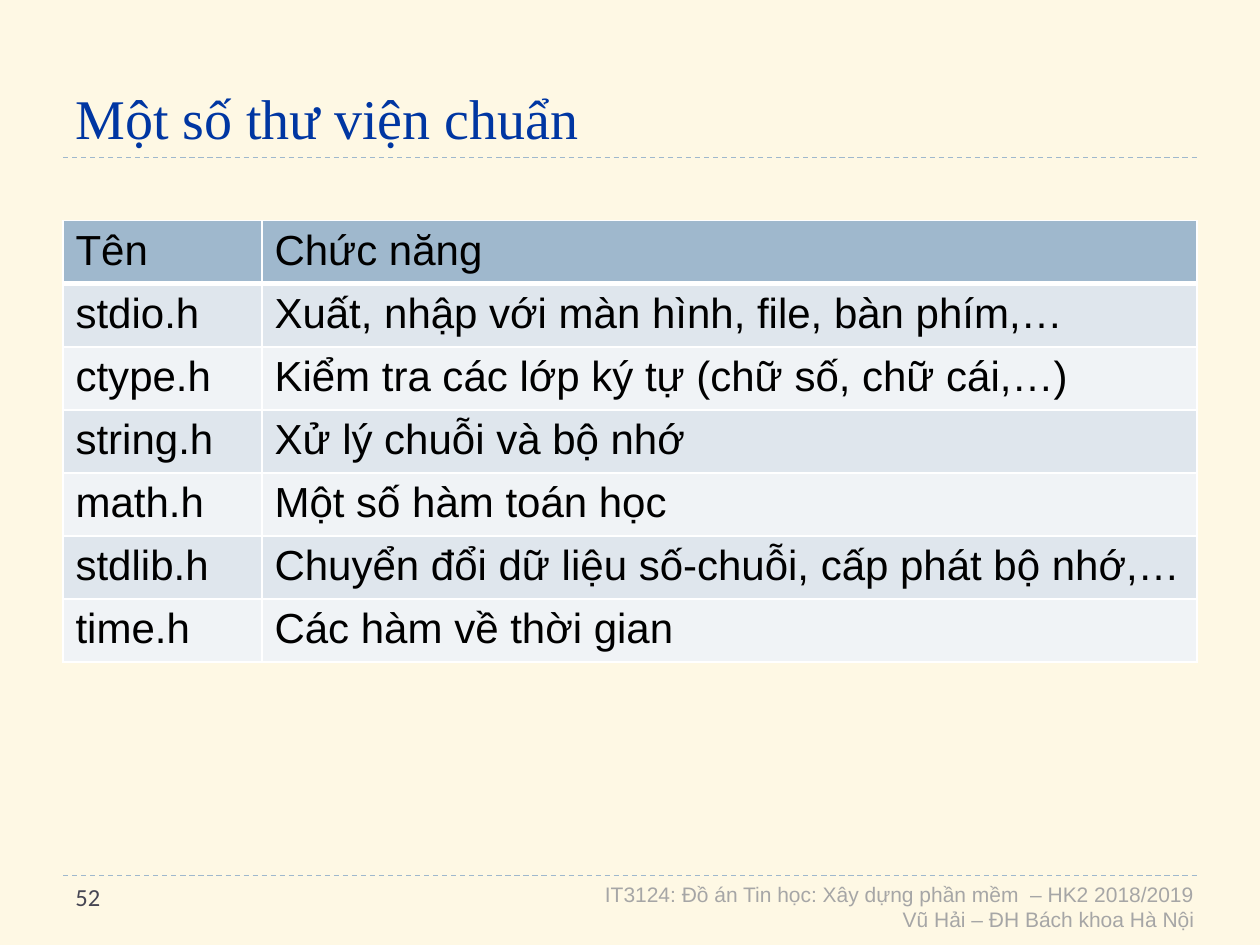
from lxml import etree
from pptx import Presentation
from pptx.dml.color import RGBColor
from pptx.enum.dml import MSO_LINE
from pptx.enum.shapes import MSO_CONNECTOR
from pptx.enum.text import MSO_ANCHOR, PP_ALIGN
from pptx.oxml import parse_xml
from pptx.oxml.ns import nsdecls, qn
from pptx.util import Cm, Pt

STRAIGHT = MSO_CONNECTOR.STRAIGHT
DASH = MSO_LINE.DASH
TOP, BOTTOM = MSO_ANCHOR.TOP, MSO_ANCHOR.BOTTOM
LEFT, RIGHT = PP_ALIGN.LEFT, PP_ALIGN.RIGHT

CREAM = RGBColor(0xFE, 0xF8, 0xE4)
BLUE = RGBColor(0x00, 0x36, 0xA2)
STEEL = RGBColor(0x9F, 0xB8, 0xCD)
BAND_DARK = RGBColor(0xDF, 0xE6, 0xED)
BAND_LIGHT = RGBColor(0xF0, 0xF3, 0xF6)
GREY = RGBColor(0xA6, 0xA6, 0xA6)
SLATE = RGBColor(0x46, 0x46, 0x53)
BLACK = RGBColor(0, 0, 0)

TITLE_FONT = {"name": "Times New Roman", "size": Pt(32)}
FOOTER_FONT = {"name": "Arial", "size": Pt(12)}
NUMBER_FONT = {"name": "Calibri", "size": Pt(14)}
CELL_FONT = {"name": "Arial", "size": Pt(24), "bold": False}

LIBRARIES = [
    ("Tên", "Chức năng"),
    ("stdio.h", "Xuất, nhập với màn hình, file, bàn phím,…"),
    ("ctype.h", "Kiểm tra các lớp ký tự (chữ số, chữ cái,…)"),
    ("string.h", "Xử lý chuỗi và bộ nhớ"),
    ("math.h", "Một số hàm toán học"),
    ("stdlib.h", "Chuyển đổi dữ liệu số-chuỗi, cấp phát bộ nhớ,…"),
    ("time.h", "Các hàm về thời gian"),
]
FOOTER = [
    "IT3124: Đồ án Tin học: Xây dựng phần mềm  – HK2 2018/2019",
    "Vũ Hải – ĐH Bách khoa Hà Nội",
]


def format_run(r, font, color):
    for key, value in font.items():
        setattr(r.font, key, value)
    r.font.color.rgb = color


def add_text(slide, box, lines, font, color, align=LEFT, anchor=TOP):
    tf = slide.shapes.add_textbox(*map(Cm, box)).text_frame
    tf.word_wrap = True
    tf.vertical_anchor = anchor
    for i, line in enumerate(lines):
        p = tf.paragraphs[0] if i == 0 else tf.add_paragraph()
        p.alignment = align
        r = p.add_run()
        r.text = line
        format_run(r, font, color)


def add_rule(slide, x, y, w):
    line = slide.shapes.add_connector(STRAIGHT, Cm(x), Cm(y), Cm(x + w), Cm(y))
    line.line.color.rgb = STEEL
    line.line.width = Pt(0.75)
    line.line.dash_style = DASH
    etree.SubElement(line._element.spPr, qn("a:effectLst"))


def set_borders(cell, widths):
    """Give the cell white borders; widths maps a side to points."""
    tc_pr = cell._tc.get_or_add_tcPr()
    for i, (side, width) in enumerate(widths.items()):
        tc_pr.insert(i, parse_xml(
            f'<a:ln{side} {nsdecls("a")} w="{Pt(width)}"><a:solidFill>'
            f'<a:srgbClr val="FFFFFF"/></a:solidFill></a:ln{side}>'))


def add_header(slide, x, y, w, h):
    add_text(slide, (x, y, w, h), ["Một số thư viện chuẩn"],
             TITLE_FONT, BLUE, anchor=BOTTOM)
    add_rule(slide, x, y + h, w)


def add_library_table(slide, x, y, w, h):
    name_w = 4.01
    table = slide.shapes.add_table(
        len(LIBRARIES), 2, Cm(x), Cm(y), Cm(w), Cm(h)).table
    for column, width in zip(table.columns, (name_w, w - name_w)):
        column.width = Cm(width)
    for i, row in enumerate(LIBRARIES):
        fill = STEEL if i == 0 else (BAND_LIGHT, BAND_DARK)[i % 2]
        # A thicker line parts the heading row from the rest
        widths = {"L": 1, "R": 1, "T": 3 if i == 1 else 1,
                  "B": 3 if i == 0 else 1}
        for j, text in enumerate(row):
            cell = table.cell(i, j)
            cell.fill.solid()
            cell.fill.fore_color.rgb = fill
            set_borders(cell, widths)
            r = cell.text_frame.paragraphs[0].add_run()
            r.text = text
            format_run(r, CELL_FONT, BLACK)


def add_footer(slide, x, y, w, h):
    credit_x = x + 9.09
    add_rule(slide, x, y, w)
    add_text(slide, (credit_x, y, 13.97, h), FOOTER, FOOTER_FONT, GREY, RIGHT)
    add_text(slide, (x, y, 5.94, 1.02), ["52"], NUMBER_FONT, SLATE)


def main():
    prs = Presentation()
    prs.slide_width, prs.slide_height = Cm(25.4), Cm(19.05)
    slide = prs.slides.add_slide(prs.slide_layouts[6])
    slide.background.fill.solid()
    slide.background.fill.fore_color.rgb = CREAM

    margin, width = 1.27, 22.86
    add_header(slide, margin, 0.43, width, 2.74)
    add_library_table(slide, margin, 4.45, width, 8.4)
    add_footer(slide, margin, 17.65, width, 1.27)
    prs.save("out.pptx")


if __name__ == "__main__":
    main()
